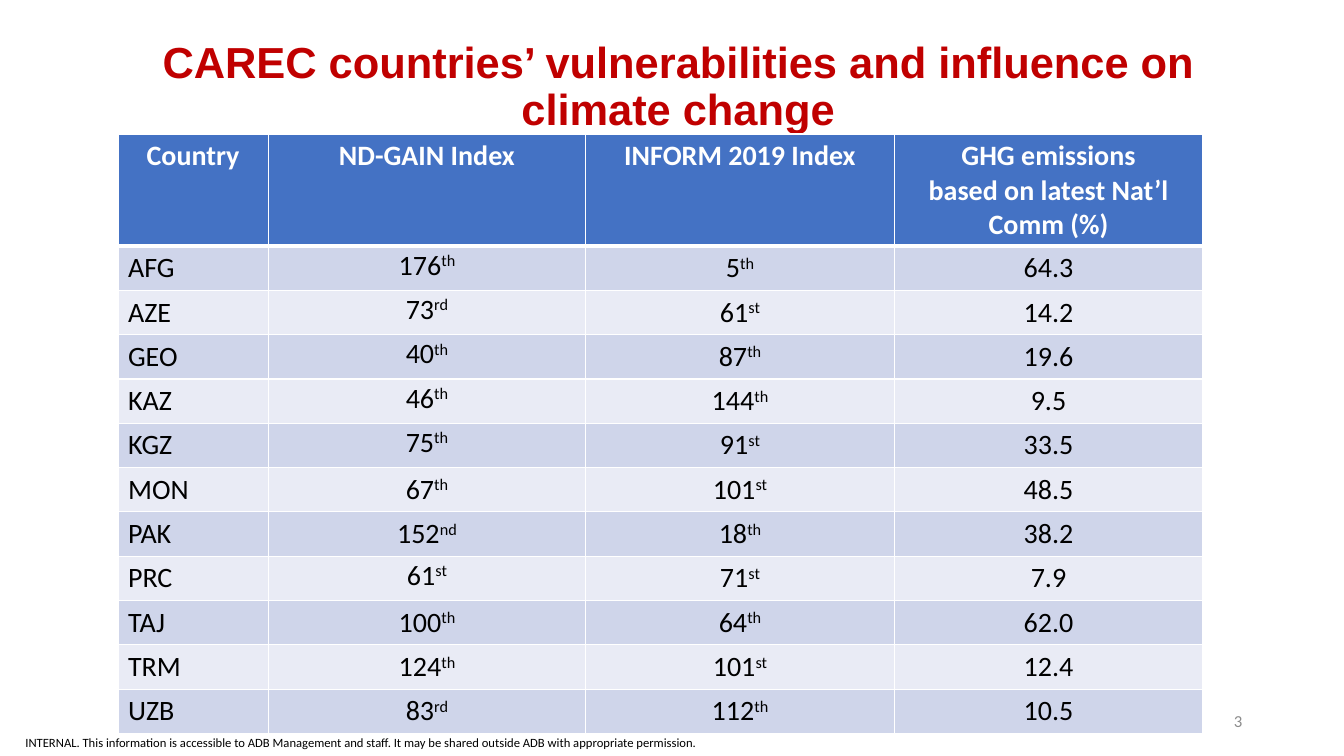
from dataclasses import dataclass
from lxml.etree import SubElement as Sub
from pptx import Presentation
from pptx.dml.color import RGBColor as RGB
from pptx.enum.text import MSO_ANCHOR as Anchor, MSO_AUTO_SIZE as Fit, PP_ALIGN as Align
from pptx.oxml.ns import qn
from pptx.util import Inches, Pt

# Content
TITLE = "CAREC countries’ vulnerabilities and influence on climate change"
NOTE = ("INTERNAL. This information is accessible to ADB Management and staff. "
        "It may be shared outside ADB with appropriate permission.")
PAGE = "3"
HEADS = [["Country"], ["ND-GAIN Index"], ["INFORM 2019 Index"],
         ["GHG emissions", "based on latest Nat’l Comm (%)"]]
# Country, ND-GAIN rank, INFORM rank, emissions share
ROWS = [
    ("AFG", ("176", "th"), ("5", "th"), "64.3"),
    ("AZE", ("73", "rd"), ("61", "st"), "14.2"),
    ("GEO", ("40", "th"), ("87", "th"), "19.6"),
    ("KAZ", ("46", "th"), ("144", "th"), "9.5"),
    ("KGZ", ("75", "th"), ("91", "st"), "33.5"),
    ("MON", ("67", "th"), ("101", "st"), "48.5"),
    ("PAK", ("152", "nd"), ("18", "th"), "38.2"),
    ("PRC", ("61", "st"), ("71", "st"), "7.9"),
    ("TAJ", ("100", "th"), ("64", "th"), "62.0"),
    ("TRM", ("124", "th"), ("101", "st"), "12.4"),
    ("UZB", ("83", "rd"), ("112", "th"), "10.5"),
]
TIGHT = {"AFG", "AZE", "GEO", "KAZ", "KGZ", "PRC"}  # ND-GAIN cells without top margin
WIDTHS = [1.49, 3.15, 3.06, 3.06]
HEAD_H, ROW_H = 1.11, 0.44


@dataclass(frozen=True)
class Theme:
    red: str = "C00000"
    blue: str = "4472C4"
    bands: tuple = ("CFD5EA", "E9EBF5")
    white: str = "FFFFFF"
    black: str = "000000"
    gray: str = "8C8C8C"
    head: str = "Arial"
    body: str = "Calibri"
    title: int = 31
    cell: int = 20
    page: int = 12
    note: int = 9


T = Theme()


def add_run(para, text, size, color, face=T.body, bold=False, sup=False):
    run = para.add_run()
    run.text = text
    font = run.font
    font.size, font.name, font.bold = Pt(size), face, bold
    font.color.rgb = RGB.from_string(color)
    if sup:
        run._r.get_or_add_rPr().set("baseline", "30000")


def add_text(slide, box, text, size, color, align, inset=None):
    frame = slide.shapes.add_textbox(*map(Inches, box)).text_frame
    frame.word_wrap = True
    frame.vertical_anchor = Anchor.MIDDLE
    if inset is not None:
        frame.margin_left = frame.margin_right = Inches(inset)
        frame.margin_top = frame.margin_bottom = Inches(inset)
    para = frame.paragraphs[0]
    para.alignment = align
    add_run(para, text, size, color)


def style(cell, fill, top=1, low=1):
    props = cell._tc.get_or_add_tcPr()
    for side, width in (("L", 1), ("R", 1), ("T", top), ("B", low)):
        line = Sub(props, qn(f"a:ln{side}"), w=str(Pt(width)))
        Sub(Sub(line, qn("a:solidFill")), qn("a:srgbClr"), val=T.white)
    cell.fill.solid()
    cell.fill.fore_color.rgb = RGB.from_string(fill)


def add_grid(slide):
    high = HEAD_H + ROW_H * len(ROWS)
    box = map(Inches, (1.17, 1.33, sum(WIDTHS), high))
    grid = slide.shapes.add_table(len(ROWS) + 1, len(WIDTHS), *box).table
    for col, width in zip(grid.columns, WIDTHS):
        col.width = Inches(width)
    for i, row in enumerate(grid.rows):
        row.height = Inches(ROW_H if i else HEAD_H)

    # Header row
    for c, lines in enumerate(HEADS):
        cell = grid.cell(0, c)
        style(cell, T.blue, low=3)
        frame = cell.text_frame
        for i, line in enumerate(lines):
            para = frame.add_paragraph() if i else frame.paragraphs[0]
            para.alignment = Align.CENTER
            add_run(para, line, T.cell, T.white, bold=True)

    # Country rows
    for r, row in enumerate(ROWS, 1):
        for c, value in enumerate(row):
            cell = grid.cell(r, c)
            style(cell, T.bands[(r - 1) % 2], top=3 if r == 1 else 1)
            para = cell.text_frame.paragraphs[0]
            para.alignment = Align.CENTER if c else Align.LEFT
            if c == 1 and row[0] in TIGHT:
                cell.margin_left = cell.margin_right = Inches(0.07)
                cell.margin_top = cell.margin_bottom = 0
                para.line_spacing = 1.07
            parts = (value,) if isinstance(value, str) else value
            for i, part in enumerate(parts):
                add_run(para, part, T.cell, T.black, sup=i > 0)


def main():
    deck = Presentation()
    deck.slide_width, deck.slide_height = Inches(13.33), Inches(7.5)
    slide = deck.slides.add_slide(deck.slide_layouts[5])

    # Title
    title = slide.shapes.title
    title.left, title.top = Inches(1.03), Inches(0.42)
    title.width, title.height = Inches(11.39), Inches(0.91)
    frame = title.text_frame
    frame.word_wrap = True
    frame.auto_size = Fit.NONE
    frame.vertical_anchor = Anchor.MIDDLE
    para = frame.paragraphs[0]
    para.alignment = Align.CENTER
    para.line_spacing = 0.9
    add_run(para, TITLE, T.title, T.red, T.head, bold=True)

    # Footer note, page number and table
    add_text(slide, (0, 7.23, 7.15, 0.27), NOTE, T.note, T.black, Align.CENTER, 0)
    add_text(slide, (9.42, 6.95, 3, 0.4), PAGE, T.page, T.gray, Align.RIGHT)
    add_grid(slide)
    deck.save("out.pptx")


if __name__ == "__main__":
    main()
